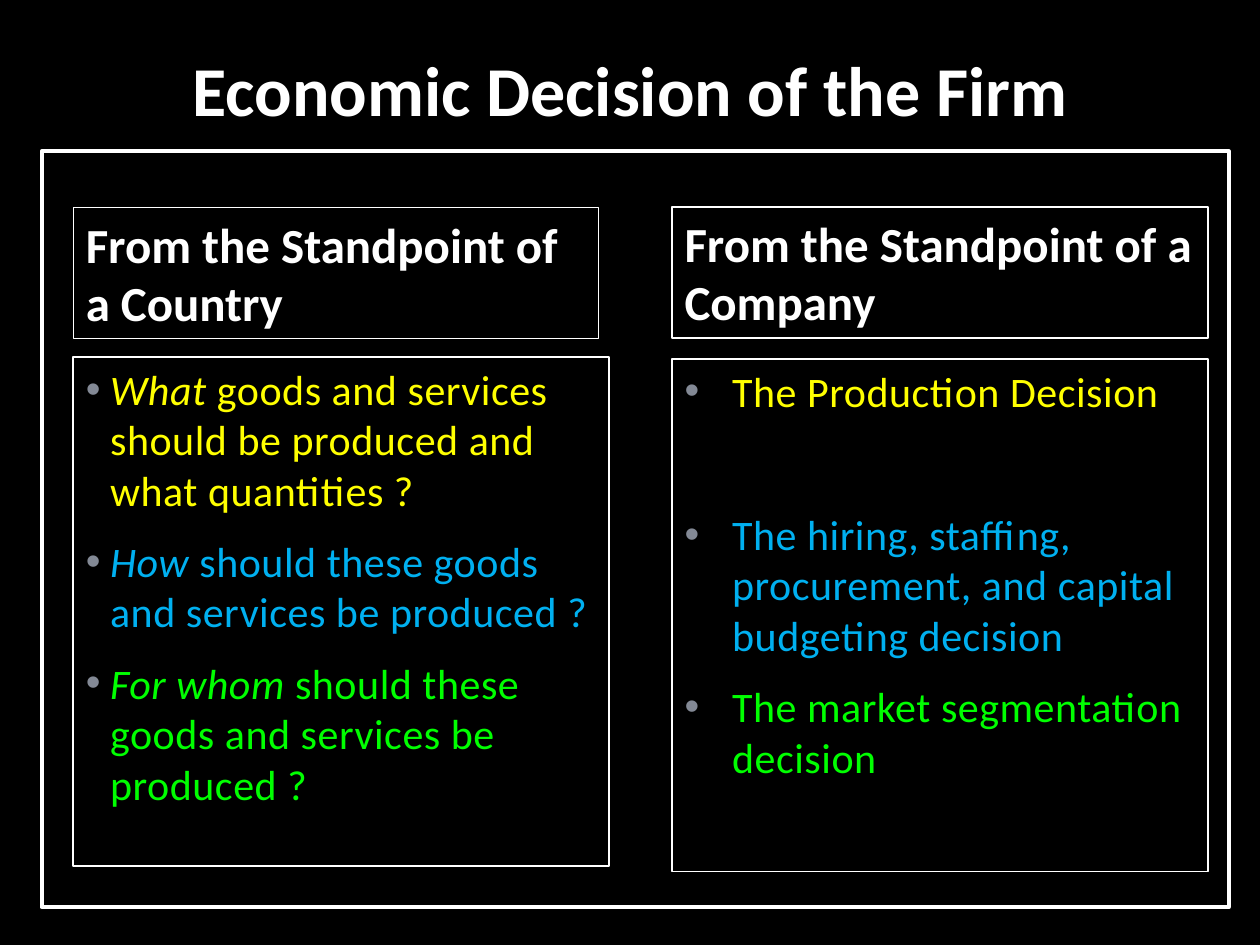
from lxml import etree
from pptx import Presentation
from pptx.dml.color import RGBColor
from pptx.enum.shapes import MSO_SHAPE
from pptx.enum.text import MSO_ANCHOR, PP_ALIGN
from pptx.oxml.ns import qn
from pptx.util import Cm, Pt

RECT = MSO_SHAPE.RECTANGLE
TOP, BOTTOM = MSO_ANCHOR.TOP, MSO_ANCHOR.BOTTOM
LEFT, CENTER = PP_ALIGN.LEFT, PP_ALIGN.CENTER

HUES = {
    "black": "000000",
    "white": "FFFFFF",
    "grey": "838995",
    "yellow": "FFFF00",
    "blue": "00B0F0",
    "green": "00FF00",
}

# Font formats
TITLE = {"name": "Calibri", "size": Pt(40), "bold": True}
HEAD = {"name": "Calibri", "size": Pt(28), "bold": True}
BODY = {"name": "Calibri", "size": Pt(24)}

GAP = 12  # points before a bullet
SKIP = 53  # the same gap plus one empty line

# Bullets: colour, italic lead, rest, points before
COUNTRY = [
    ("yellow", "What", " goods and services should be produced and what quantities ?", GAP),
    ("blue", "How ", "should these goods and services be produced ?", GAP),
    ("green", "For whom ", "should these goods and services be produced ?", GAP),
]
COMPANY = [
    ("yellow", "", "The Production Decision", GAP),
    ("blue", "", "The hiring, staffing, procurement, and capital budgeting decision", SKIP),
    ("green", "", "The market segmentation decision", GAP),
]


def color(name):
    return RGBColor.from_string(HUES[name])


def set_all(item, values):
    for key, value in values.items():
        setattr(item, key, value)


def add_run(para, text, hue, style):
    run = para.add_run()
    run.text = text
    set_all(run.font, style)
    run.font.color.rgb = color(hue)
    return run


def add_box(slide, area, width):
    """Add an unfilled box with a white outline; return its text frame."""
    box = slide.shapes.add_shape(RECT, *map(Cm, area))
    box.shadow.inherit = False
    box.fill.background()
    box.line.color.rgb = color("white")
    box.line.width = Pt(width)
    frame = box.text_frame
    set_all(frame, {"word_wrap": True, "vertical_anchor": TOP})
    frame.paragraphs[0].alignment = LEFT
    return frame


def add_title(slide, text):
    box = slide.shapes.add_textbox(Cm(0), Cm(0.64), Cm(25.4), Cm(2.11))
    frame = box.text_frame
    set_all(frame, {"word_wrap": True, "vertical_anchor": BOTTOM})
    para = frame.paragraphs[0]
    set_all(para, {"alignment": CENTER, "space_before": Pt(4)})
    add_run(para, text, "white", TITLE)


def add_head(slide, area, width, text):
    frame = add_box(slide, area, width)
    add_run(frame.paragraphs[0], text, "white", HEAD)


def set_bullet(para, indent):
    props = para._p.get_or_add_pPr()
    props.set("marL", str(Cm(indent)))
    props.set("indent", str(-Cm(indent)))
    tint = etree.SubElement(props, qn("a:buClr"))
    etree.SubElement(tint, qn("a:srgbClr"), val=HUES["grey"])
    etree.SubElement(props, qn("a:buFont"), typeface="Arial")
    etree.SubElement(props, qn("a:buChar"), char="•")


def add_list(slide, area, indent, items):
    frame = add_box(slide, area, 1)
    for i, (hue, lead, rest, gap) in enumerate(items):
        para = frame.add_paragraph() if i else frame.paragraphs[0]
        set_all(para, {"alignment": LEFT, "space_before": Pt(gap)})
        set_bullet(para, indent)
        for text, slant in ((lead, True), (rest, False)):
            if text:
                run = add_run(para, text, hue, {**BODY, "italic": slant})
                run.font._element.set("spc", "30")


def main():
    deck = Presentation()
    set_all(deck, {"slide_width": Cm(25.4), "slide_height": Cm(19.05)})
    slide = deck.slides.add_slide(deck.slide_layouts[6])
    back = slide.background.fill
    back.solid()
    back.fore_color.rgb = color("black")

    # Title and outer frame
    add_title(slide, "Economic Decision of the Firm")
    add_box(slide, (0.84, 3.05, 23.93, 15.24), 2.25)

    # Bullet lists
    add_list(slide, (1.48, 7.2, 10.8, 10.26), 0.49, COUNTRY)
    add_list(slide, (13.55, 7.24, 10.8, 10.33), 0.96, COMPANY)

    # Column heads
    add_head(slide, (1.48, 4.19, 10.58, 2.64), 0.75, "From the Standpoint of a Country")
    add_head(slide, (13.55, 4.17, 10.8, 2.64), 1, "From the Standpoint of a Company")

    deck.save("out.pptx")


if __name__ == "__main__":
    main()
